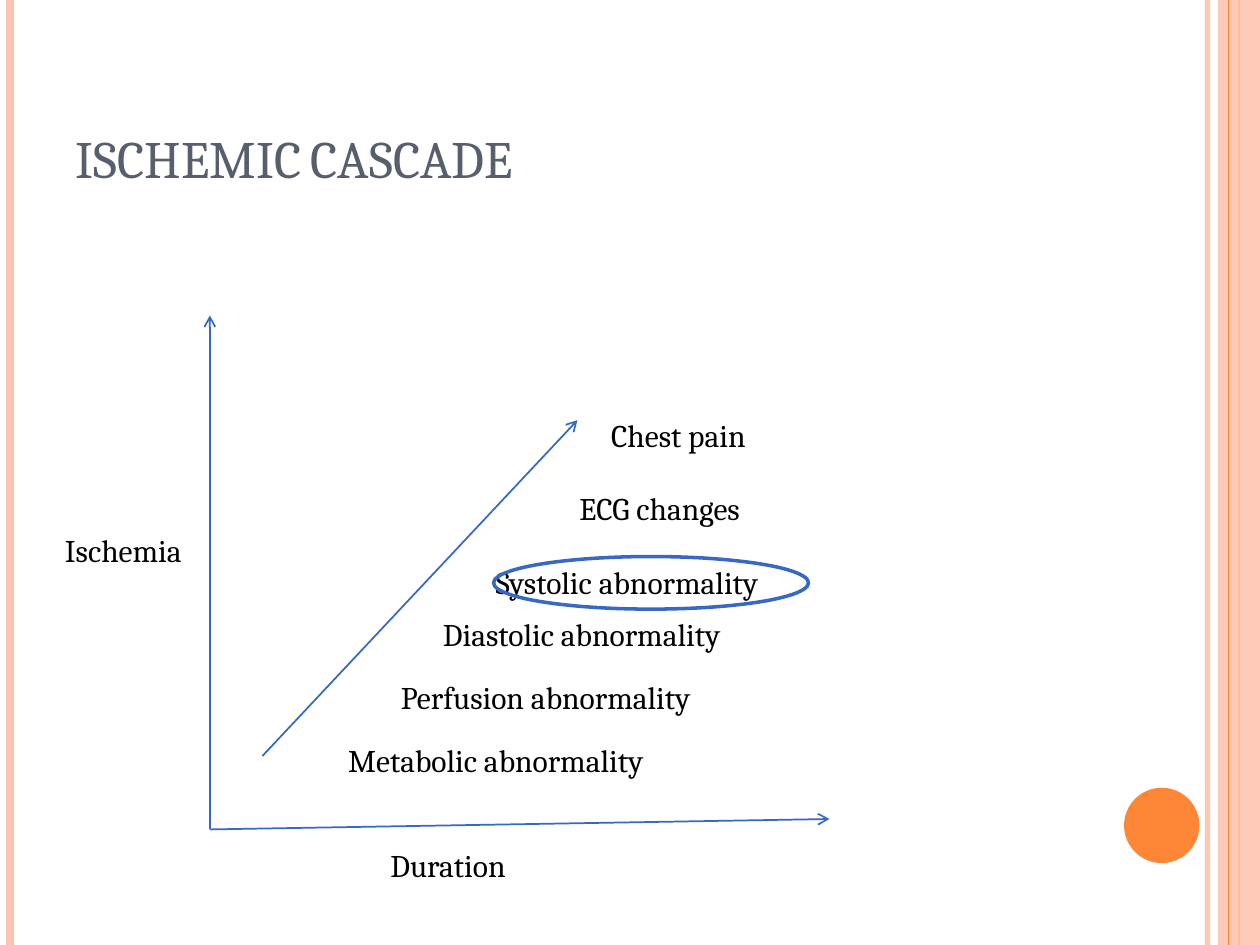
"""Build the ischemic cascade slide: a diagram of ischemia against duration."""
from lxml import etree
from pptx import Presentation
from pptx.dml.color import RGBColor
from pptx.enum.shapes import MSO_CONNECTOR, MSO_SHAPE
from pptx.enum.text import MSO_ANCHOR, MSO_AUTO_SIZE, PP_ALIGN
from pptx.oxml.ns import qn
from pptx.util import Cm, Pt

STRAIGHT = MSO_CONNECTOR.STRAIGHT
RECTANGLE, OVAL = MSO_SHAPE.RECTANGLE, MSO_SHAPE.OVAL
BOTTOM, LEFT = MSO_ANCHOR.BOTTOM, PP_ALIGN.LEFT
GROW, FIXED = MSO_AUTO_SIZE.SHAPE_TO_FIT_TEXT, MSO_AUTO_SIZE.NONE

WIDTH, HEIGHT = 25.4, 19.05
FONT = "Cambria"
PEACH, ORANGE, BLUE, SLATE, BLACK = "FEC3AE", "FE8637", "3668C4", "575F6D", "000000"

TITLE = "ISCHEMIC CASCADE"
LABELS = [
    ("Metabolic abnormality", 6.77, 14.82, 7.62),
    ("Perfusion abnormality", 7.83, 13.55, 7.41),
    ("Diastolic abnormality", 8.68, 12.28, 7.41),
    ("Systolic abnormality", 9.74, 11.22, 8.47),
    ("ECG changes", 11.43, 9.74, 5.93),
    ("Chest pain", 12.07, 8.26, 4.66),
    ("Duration", 7.62, 16.93, 5.93),
    ("Ischemia", 1.06, 10.58, 3.18),
]
ORIGIN = (4.23, 16.72)
ARROWS = [
    (ORIGIN, (16.72, 16.51)),
    ((5.29, 15.24), (11.64, 8.47)),
    (ORIGIN, (4.23, 6.36)),
]
STRIPES_BEHIND = [(24.34, PEACH, 3, 93), (0.2, PEACH, 4.5, 100), (24.98, ORANGE, 1.5, 100)]
STRIPE_FRONT = (24.77, ORANGE, 0.75, 100)
BAND_LEFT = 24.55


def paint(fill, color, opacity=100):
    """Make a fill solid in a hex colour, with an opacity in percent."""
    fill.solid()
    fill.fore_color.rgb = RGBColor.from_string(color)
    if opacity < 100:
        tint = fill._xPr.find(".//" + qn("a:srgbClr"))
        etree.SubElement(tint, qn("a:alpha"), val=str(opacity * 1000))


def write(shape, text, size, color, small_caps=False):
    """Put one formatted, left-aligned run into a shape."""
    para = shape.text_frame.paragraphs[0]
    para.alignment = LEFT
    span = para.add_run()
    span.text = text
    span.font.name, span.font.size = FONT, Pt(size)
    span.font.color.rgb = RGBColor.from_string(color)
    if small_caps:
        span.font._element.set("cap", "small")


def add_line(page, start, end, color, weight, opacity=100, arrow=False):
    """Draw a straight line between two points."""
    line = page.shapes.add_connector(STRAIGHT, *map(Cm, start + end))
    line.line.width = Pt(weight)
    paint(line.line.fill, color, opacity)
    if arrow:
        etree.SubElement(line.line._get_or_add_ln(), qn("a:tailEnd"), type="arrow")
    etree.SubElement(line._element.spPr, qn("a:effectLst"))


def add_stripe(page, left, color, weight, opacity):
    """Draw a stripe over the full height of the page."""
    add_line(page, (left, 0), (left, HEIGHT), color, weight, opacity)


def add_figure(page, kind, *place, fill=None, opacity=100, outline=None):
    """Draw a preset shape with either a fill or an outline."""
    figure = page.shapes.add_shape(kind, *map(Cm, place))
    figure.shadow.inherit = False
    if fill:
        paint(figure.fill, fill, opacity)
    else:
        figure.fill.background()
    if outline:
        paint(figure.line.fill, outline)
        figure.line.width = Pt(2)
    else:
        figure.line.fill.background()


def add_title(page):
    """Place and format the title placeholder."""
    title = page.shapes.title
    title.left, title.top, title.width, title.height = map(Cm, (1.27, 0.76, 20.75, 3.18))
    title.text_frame.vertical_anchor = BOTTOM
    title.text_frame.auto_size = FIXED
    write(title, TITLE, 30, SLATE, small_caps=True)


def add_label(page, text, left, top, width):
    """Add one text label of the diagram."""
    box = page.shapes.add_textbox(*map(Cm, (left, top, width, 1.02)))
    box.text_frame.word_wrap = True
    box.text_frame.auto_size = GROW
    write(box, text, 18, BLACK)


def main():
    """Build and save the deck."""
    deck = Presentation()
    deck.slide_width, deck.slide_height = Cm(WIDTH), Cm(HEIGHT)
    page = deck.slides.add_slide(deck.slide_layouts[5])
    for stripe in STRIPES_BEHIND:
        add_stripe(page, *stripe)
    add_figure(page, RECTANGLE, BAND_LEFT, 0, WIDTH - BAND_LEFT, HEIGHT, fill=PEACH, opacity=87)
    add_stripe(page, *STRIPE_FRONT)
    add_figure(page, OVAL, 22.66, 15.88, 1.52, 1.52, fill=ORANGE)
    add_title(page)
    for start, end in ARROWS:
        add_line(page, start, end, BLUE, 1, arrow=True)
    for label in LABELS:
        add_label(page, *label)
    add_figure(page, OVAL, 9.95, 11.22, 6.35, 1.06, outline=BLUE)
    deck.save("out.pptx")


if __name__ == "__main__":
    main()
